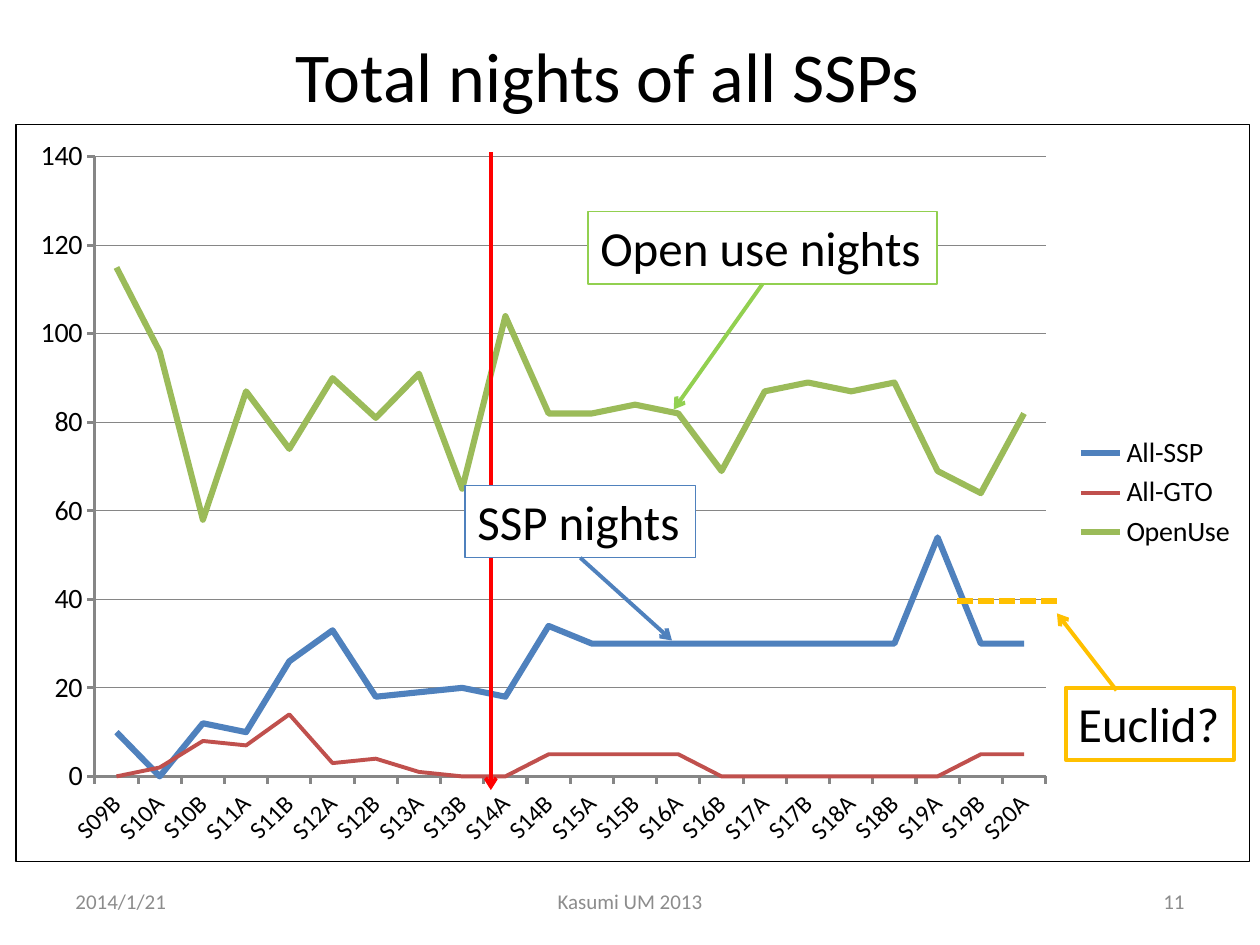
from lxml.etree import SubElement
from pptx import Presentation
from pptx.chart.data import CategoryChartData
from pptx.dml.color import RGBColor
from pptx.enum.chart import XL_CHART_TYPE, XL_LEGEND_POSITION, XL_MARKER_STYLE, XL_TICK_MARK
from pptx.enum.dml import MSO_LINE
from pptx.enum.shapes import MSO_CONNECTOR, MSO_SHAPE
from pptx.enum.text import MSO_ANCHOR, MSO_AUTO_SIZE, PP_ALIGN
from pptx.oxml import parse_xml
from pptx.oxml.ns import nsdecls, qn
from pptx.util import Pt

COLORS = {
    "black": "000000", "white": "FFFFFF", "footer": "8C8C8C", "axis": "868686",
    "now": "FF0000", "open_note": "92D050", "euclid": "FFC000",
    "ssp": "4F81BD", "gto": "C0504D", "open": "9BBB59",
}
BOTTOM = 2

# The two halves of each year, from S09B to S20A
SEMESTERS = [f"S{year:02d}{half}" for year in range(9, 21) for half in "AB"][1:-1]
# name, color, line width, nights
SERIES = [
    ("All-SSP", "ssp", 3.5, [10, 0, 12, 10, 26, 33, 18, 19, 20, 18, 34,
                             30, 30, 30, 30, 30, 30, 30, 30, 54, 30, 30]),
    ("All-GTO", "gto", 2.25, [0, 2, 8, 7, 14, 3, 4, 1, 0, 0, 5,
                              5, 5, 5, 0, 0, 0, 0, 0, 0, 5, 5]),
    ("OpenUse", "open", 3.5, [115, 96, 58, 87, 74, 90, 81, 91, 65, 104, 82,
                              82, 84, 82, 69, 87, 89, 87, 89, 69, 64, 82]),
]


def rgb(name):
    return RGBColor.from_string(COLORS[name])


class SlideBuilder:
    def __init__(self, page, font="Calibri"):
        self.page = page
        self.font = font

    def stroke(self, line, color, width):
        line.color.rgb = rgb(color)
        line.width = Pt(width)

    def set_text(self, shape, words, size, color="black", align=PP_ALIGN.LEFT):
        paragraph = shape.text_frame.paragraphs[0]
        paragraph.text = words
        paragraph.alignment = align
        paragraph.font.name = self.font
        paragraph.font.size = Pt(size)
        paragraph.font.color.rgb = rgb(color)

    def fit(self, shape):
        shape.text_frame.word_wrap = False
        shape.text_frame.auto_size = MSO_AUTO_SIZE.SHAPE_TO_FIT_TEXT

    def title(self, words, *place):
        box = self.page.shapes.add_textbox(*map(Pt, place))
        self.set_text(box, words, 40)
        self.fit(box)

    def footer(self, words, align, left, width):
        box = self.page.shapes.add_textbox(Pt(left), Pt(500.5), Pt(width), Pt(28.75))
        box.text_frame.word_wrap = True
        box.text_frame.vertical_anchor = MSO_ANCHOR.MIDDLE
        self.set_text(box, words, 12, "footer", align)

    def label(self, words, color, width, place, filled=True):
        box = self.page.shapes.add_shape(MSO_SHAPE.RECTANGLE, *map(Pt, place))
        box.shadow.inherit = False
        if filled:
            box.fill.solid()
            box.fill.fore_color.rgb = rgb("white")
        else:
            box.fill.background()
        self.stroke(box.line, color, width)
        box.text_frame.vertical_anchor = MSO_ANCHOR.TOP
        self.set_text(box, words, 28)
        self.fit(box)
        return box

    def line(self, color, start, end, width=2.25, arrow=True, dash=None, source=None):
        """Draw from start to end; source is a box whose bottom the line leaves."""
        connector = self.page.shapes.add_connector(
            MSO_CONNECTOR.STRAIGHT, *map(Pt, (*start, *end)))
        if source is not None:
            connector.begin_connect(source, BOTTOM)
        self.stroke(connector.line, color, width)
        if dash is not None:
            connector.line.dash_style = dash
        if arrow:
            SubElement(connector.line._get_or_add_ln(), qn("a:tailEnd"), type="arrow")
        SubElement(connector._element.spPr, qn("a:effectLst"))

    def line_chart(self, categories, series_rows, *place):
        data = CategoryChartData()
        data.categories = categories
        for name, _, _, values in series_rows:
            data.add_series(name, values)
        chart = self.page.shapes.add_chart(
            XL_CHART_TYPE.LINE, *map(Pt, place), data).chart
        chart.has_title = False
        chart.font.name = self.font
        chart.font.size = Pt(10)
        chart.font.color.rgb = rgb("black")

        for series, (_, color, width, _) in zip(chart.plots[0].series, series_rows):
            series.smooth = False
            series.marker.style = XL_MARKER_STYLE.NONE
            self.stroke(series.format.line, color, width)

        for axis, size in ((chart.category_axis, 14), (chart.value_axis, 16)):
            axis.major_tick_mark = XL_TICK_MARK.OUTSIDE
            axis.minor_tick_mark = XL_TICK_MARK.NONE
            axis.tick_labels.font.size = Pt(size)
            self.stroke(axis.format.line, "axis", 1.75)
        body = chart.category_axis._element.find(qn("c:txPr")).find(qn("a:bodyPr"))
        body.set("rot", "-2700000")
        values_axis = chart.value_axis
        values_axis.minimum_scale, values_axis.maximum_scale = 0, 140
        values_axis.major_unit = 20
        values_axis.has_major_gridlines = True
        self.stroke(values_axis.major_gridlines.format.line, "axis", 0.75)

        chart.has_legend = True
        chart.legend.position = XL_LEGEND_POSITION.RIGHT
        chart.legend.include_in_layout = False
        chart.legend.font.size = Pt(16)
        self.frame_chart(chart)

    def frame_chart(self, chart):
        """Outline the chart and fix the inner plot area."""
        chart_part = chart._chartSpace.find(qn("c:chart"))
        chart_part.addnext(parse_xml(
            f'<c:spPr {nsdecls("c", "a")}><a:noFill/><a:ln w="{Pt(0.75)}"><a:solidFill>'
            f'<a:srgbClr val="{COLORS["black"]}"/></a:solidFill></a:ln></c:spPr>'))
        plot_area = chart_part.find(qn("c:plotArea"))
        layout = plot_area.find(qn("c:layout"))
        if layout is None:
            layout = parse_xml(f'<c:layout {nsdecls("c")}/>')
            plot_area.insert(0, layout)
        manual = SubElement(layout, qn("c:manualLayout"))
        settings = {"layoutTarget": "inner", "xMode": "edge", "yMode": "edge",
                    "x": "0.064", "y": "0.044", "w": "0.771", "h": "0.841"}
        for tag, value in settings.items():
            SubElement(manual, qn(f"c:{tag}"), val=value)


def main():
    deck = Presentation()
    deck.slide_width, deck.slide_height = Pt(720), Pt(540)
    builder = SlideBuilder(deck.slides.add_slide(deck.slide_layouts[6]))

    builder.line_chart(SEMESTERS, SERIES, 8.75, 70.75, 705.5, 421.75)
    builder.line("now", (280.5, 87), (280.5, 451.5))
    builder.title("Total nights of all SSPs", 162, 15, 373.5, 55.5)

    open_use = builder.label("Open use nights", "open_note", 0.75, (336, 121, 199.5, 41.25))
    builder.line("open_note", (435.75, 162.25), (385, 234), source=open_use)
    ssp = builder.label("SSP nights", "ssp", 0.75, (265.75, 277.5, 131.75, 41.25))
    builder.line("ssp", (331.5, 318.75), (384, 366), source=ssp)

    builder.line("euclid", (547, 343.5), (604, 343.5), 3, arrow=False,
                 dash=MSO_LINE.SQUARE_DOT)
    builder.label("Euclid?", "euclid", 2.25, (609, 393, 96, 41.25), filled=False)
    builder.line("euclid", (638, 394.5), (604, 350.5))

    builder.footer("11", PP_ALIGN.RIGHT, 516, 168)
    builder.footer("2014/1/21", PP_ALIGN.LEFT, 36, 168)
    builder.footer("Kasumi UM 2013", PP_ALIGN.CENTER, 246, 228)

    deck.save("out.pptx")


if __name__ == "__main__":
    main()
